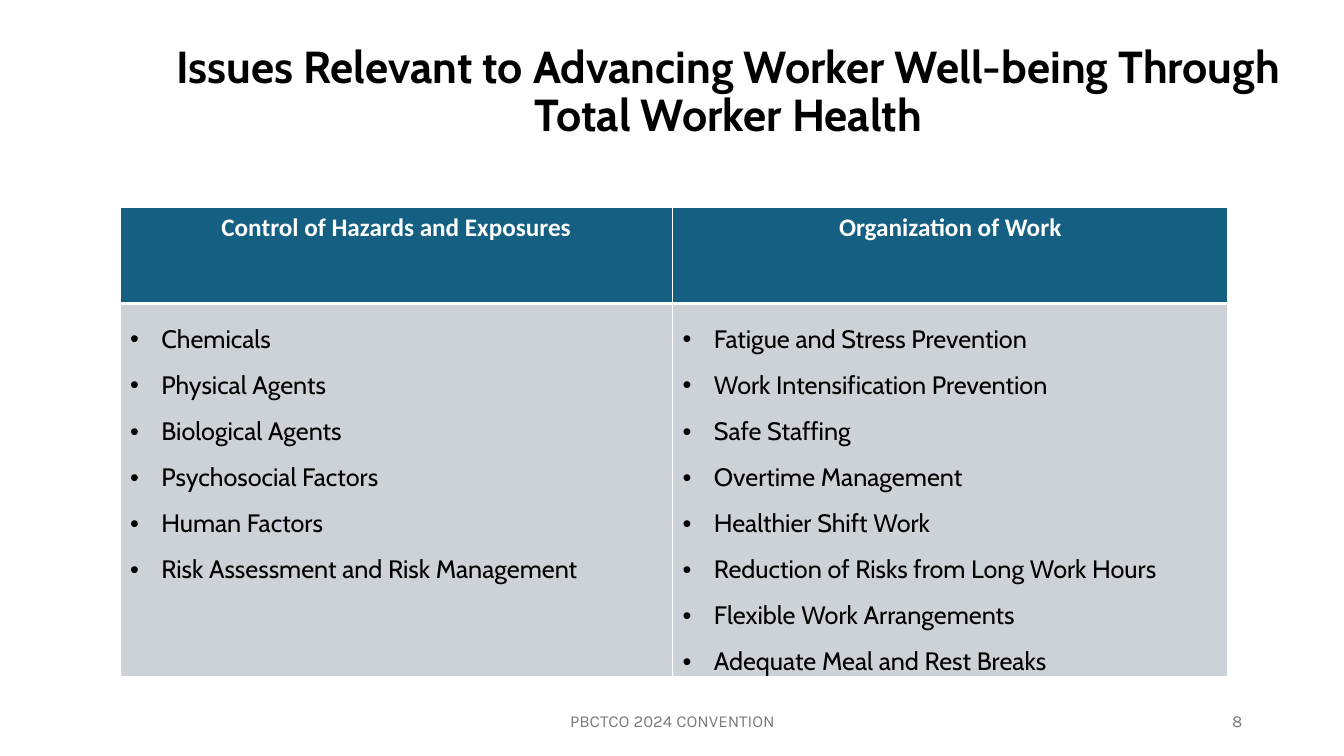
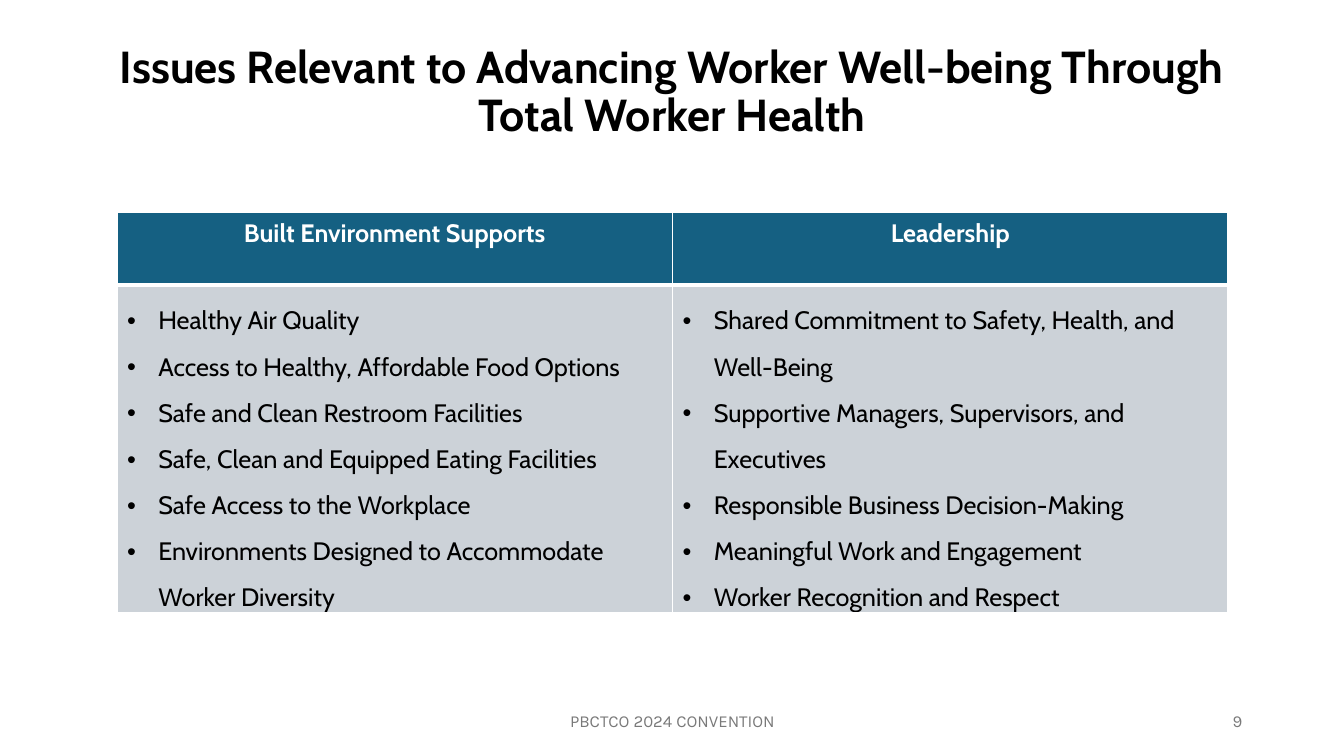
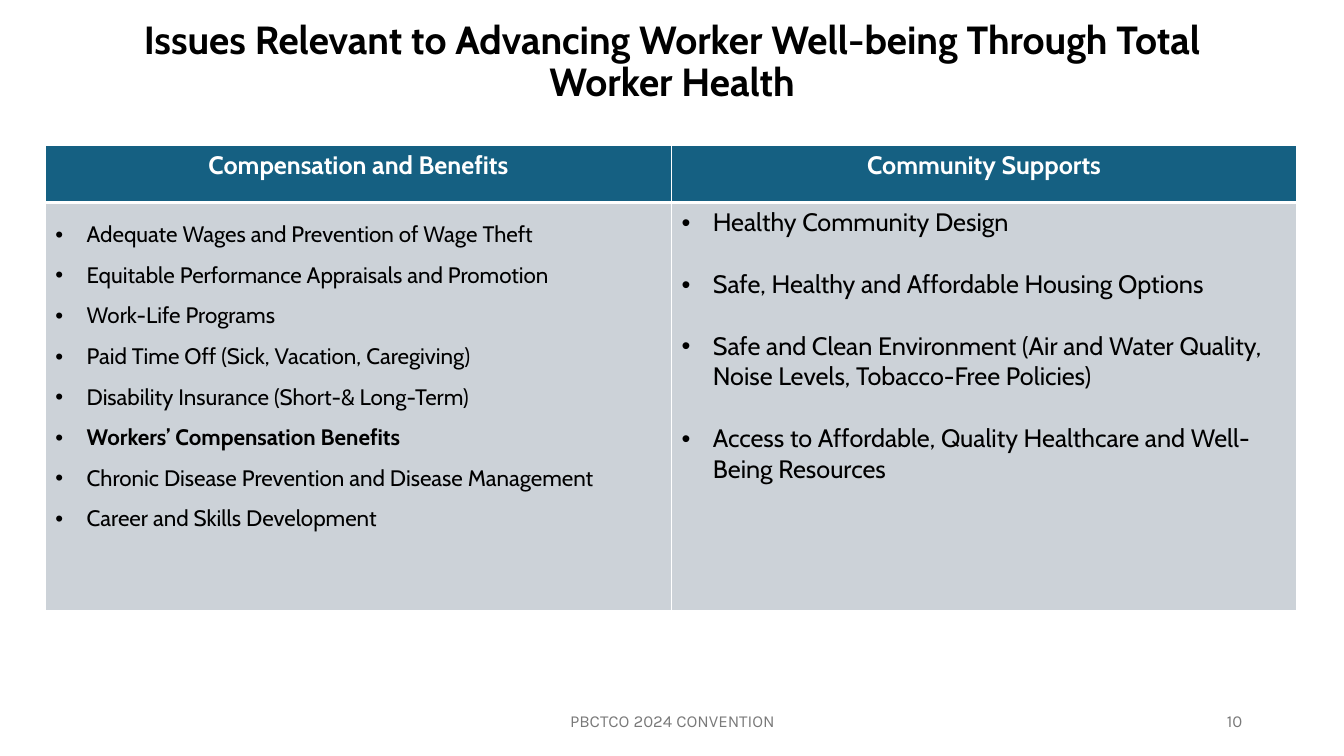
"""Build three slides on advancing worker well-being, each with a two-column table."""
from lxml import etree
from pptx import Presentation
from pptx import util as u
from pptx.dml.color import RGBColor
from pptx.enum import text
from pptx.oxml import ns

PX = 9144
WHITE = RGBColor(0xFF, 0xFF, 0xFF)
BLACK = RGBColor(0x00, 0x00, 0x00)
TEAL = RGBColor(0x15, 0x60, 0x82)
SILVER = RGBColor(0xCC, 0xD2, 0xD8)
GREY = RGBColor(0x79, 0x79, 0x79)
BODY_FONT = "Cabin"
FOOTER_FONT = "Karla"
TITLE = "Issues Relevant to Advancing Worker Well-being Through Total Worker Health"
FOOTER = "PBCTCO 2024 CONVENTION"
INDENT = 31

HAZARDS = [
    "Chemicals",
    "Physical Agents",
    "Biological Agents",
    "Psychosocial Factors",
    "Human Factors",
    "Risk Assessment and Risk Management",
]
WORK = [
    "Fatigue and Stress Prevention",
    "Work Intensification Prevention",
    "Safe Staffing",
    "Overtime Management",
    "Healthier Shift Work",
    "Reduction of Risks from Long Work Hours",
    "Flexible Work Arrangements",
    "Adequate Meal and Rest Breaks",
]
ENVIRONMENT = [
    "Healthy Air Quality",
    "Access to Healthy, Affordable Food Options",
    "Safe and Clean Restroom Facilities",
    "Safe, Clean and Equipped Eating Facilities",
    "Safe Access to the Workplace",
    "Environments Designed to Accommodate Worker Diversity",
]
LEADERSHIP = [
    "Shared Commitment to Safety, Health, and Well-Being",
    "Supportive Managers, Supervisors, and Executives",
    "Responsible Business Decision-Making",
    "Meaningful Work and Engagement",
    "Worker Recognition and Respect",
]
KEY_BENEFIT = "Workers’ Compensation Benefits"
BENEFITS = [
    "Adequate Wages and Prevention of Wage Theft",
    "Equitable Performance Appraisals and Promotion",
    "Work-Life Programs",
    "Paid Time Off (Sick, Vacation, Caregiving)",
    "Disability Insurance (Short-& Long-Term)",
    KEY_BENEFIT,
    "Chronic Disease Prevention and Disease Management",
    "Career and Skills Development",
]
COMMUNITY = [
    "Healthy Community Design",
    "Safe, Healthy and Affordable Housing Options",
    "Safe and Clean Environment (Air and Water Quality, Noise Levels, Tobacco-Free Policies)",
    "Access to Affordable, Quality Healthcare and Well-Being Resources",
]


def px(length):
    """Turn px into EMU."""
    return u.Emu(length * PX)


def add_run(para, words, size, color, font=BODY_FONT, bold=False):
    """Add one formatted run to a paragraph."""
    span = para.add_run()
    span.text = words
    span.font.size = u.Pt(size)
    span.font.name = font
    span.font.bold = bold
    span.font.color.rgb = color


def set_title(page, left, top, size):
    """Place and write the title."""
    box = page.shapes.title
    box.left, box.top, box.width, box.height = map(px, (left, top, 1181, 125))
    frame = box.text_frame
    frame.word_wrap = True
    frame.auto_size = text.MSO_AUTO_SIZE.NONE
    frame.vertical_anchor = text.MSO_ANCHOR.MIDDLE
    para = frame.paragraphs[0]
    para.alignment = text.PP_ALIGN.CENTER
    para.line_spacing = 0.9
    add_run(para, TITLE, size, BLACK, bold=True)


def add_footer(page, left, width, words, align):
    """Add a grey line of text at the foot of the page."""
    box = page.shapes.add_textbox(px(left), px(695), px(width), px(40))
    frame = box.text_frame
    frame.word_wrap = True
    frame.vertical_anchor = text.MSO_ANCHOR.MIDDLE
    para = frame.paragraphs[0]
    para.alignment = align
    add_run(para, words, 12, GREY, FOOTER_FONT)


def style_cell(cell, color, bottom):
    """Give a cell white borders and a solid fill."""
    props = cell._tc.get_or_add_tcPr()
    for side, points in (("L", 1), ("R", 1), ("T", 1), ("B", bottom)):
        line = etree.SubElement(props, ns.qn("a:ln" + side), w=str(u.Pt(points)))
        fill = etree.SubElement(line, ns.qn("a:solidFill"))
        etree.SubElement(fill, ns.qn("a:srgbClr"), val=str(WHITE))
    cell.fill.solid()
    cell.fill.fore_color.rgb = color


def add_bullet(para):
    """Give a paragraph a hanging round bullet."""
    props = para._p.get_or_add_pPr()
    props.set("marL", str(px(INDENT)))
    props.set("indent", str(px(-INDENT)))
    etree.SubElement(props, ns.qn("a:buFont"), typeface="Arial")
    etree.SubElement(props, ns.qn("a:buChar"), char="•")


def fill_header(cell, words, font):
    """Write a column heading."""
    style_cell(cell, TEAL, 3)
    para = cell.text_frame.paragraphs[0]
    para.alignment = text.PP_ALIGN.CENTER
    add_run(para, words, 18, WHITE, font, True)


def fill_list(cell, items, size=18, spacing=1.5, gap=0):
    """Write a bulleted list into a cell."""
    style_cell(cell, SILVER, 1)
    frame = cell.text_frame
    for index, item in enumerate(items):
        para = frame.add_paragraph() if index else frame.paragraphs[0]
        add_bullet(para)
        para.line_spacing = spacing
        if index and gap:
            para.space_before = u.Pt(gap)
        add_run(para, item, size, BLACK, bold=item == KEY_BENEFIT)


def add_columns(page, left, top, widths, heights, headings, font=BODY_FONT):
    """Add a table of two headed columns and return its body cells."""
    frame = page.shapes.add_table(2, 2, px(left), px(top), px(sum(widths)), px(sum(heights)))
    table = frame.table
    table.horz_banding = False
    for column, width in zip(table.columns, widths):
        column.width = px(width)
    for row, height in zip(table.rows, heights):
        row.height = px(height)
    for index, words in enumerate(headings):
        fill_header(table.cell(0, index), words, font)
    return table.cell(1, 0), table.cell(1, 1)


def add_page(deck, number, left=76, top=30, size=32):
    """Add a page with its title and footers."""
    page = deck.slides.add_slide(deck.slide_layouts[5])
    set_title(page, left, top, size)
    add_footer(page, 942, 300, str(number), text.PP_ALIGN.RIGHT)
    add_footer(page, 442, 450, FOOTER, text.PP_ALIGN.CENTER)
    return page


def main():
    """Build and save the deck."""
    deck = Presentation()
    deck.slide_width, deck.slide_height = px(1333), px(750)

    page = add_page(deck, 8, left=132)
    hazards, work = add_columns(
        page, 119, 206, (548, 551), (95, 315),
        ("Control of Hazards and Exposures", "Organization of Work"), "Calibri")
    fill_list(hazards, HAZARDS)
    fill_list(work, WORK)

    page = add_page(deck, 9)
    environment, leadership = add_columns(
        page, 116, 211, (551, 551), (72, 315),
        ("Built Environment Supports", "Leadership"))
    fill_list(environment, ENVIRONMENT)
    fill_list(leadership, LEADERSHIP)

    page = add_page(deck, 10, top=0, size=28)
    benefits, community = add_columns(
        page, 45, 144, (621, 620), (57, 405),
        ("Compensation and Benefits", "Community Supports"))
    fill_list(benefits, BENEFITS, size=16)
    fill_list(community, COMMUNITY, spacing=1.0, gap=22)

    deck.save("out.pptx")


if __name__ == "__main__":
    main()
